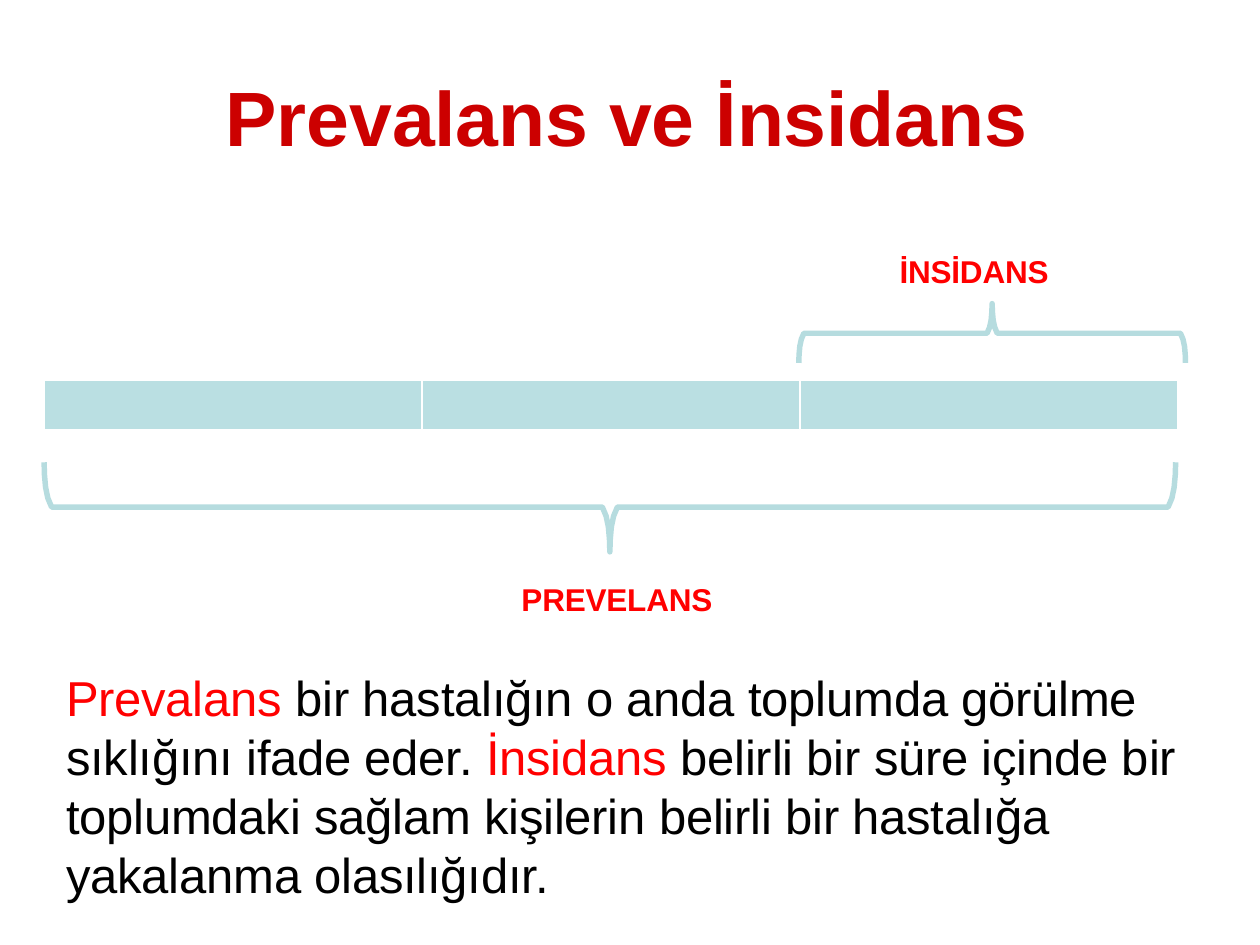
"""Build the slide that contrasts prevalence and incidence on a timeline."""
import pptx
import pptx.dml.color
import pptx.enum.text
import pptx.oxml
import pptx.oxml.ns
import pptx.util

Pt = pptx.util.Pt
RGB = pptx.dml.color.RGBColor
DARK_RED = RGB(0xCC, 0x00, 0x00)
RED = RGB(0xFF, 0x00, 0x00)
BLACK = RGB(0x00, 0x00, 0x00)
BAR = RGB(0xBA, 0xDF, 0xE2)
BRACE = RGB(0xB6, 0xDC, 0xDF)

TITLE = {"size": Pt(44), "bold": True, "name": "Arial"}
LABEL = {"size": Pt(18), "bold": True, "name": "Arial"}
BODY = {"size": Pt(28), "bold": False, "name": "Arial"}
CORNER = [(0, 0), (0.05, 0.14), (0.2, 0.28), (0.5, 0.4), (1, 0.5)]
BORDERS = {"lnL": 1, "lnR": 1, "lnT": 1, "lnB": 3}


def add_text(slide, box, runs, fmt):
    """Add a text box whose runs are (text, colour) pairs in one format."""
    tf = slide.shapes.add_textbox(*map(Pt, box)).text_frame
    tf.word_wrap = True
    tf.auto_size = pptx.enum.text.MSO_AUTO_SIZE.NONE
    for side, inset in {"left": 0, "top": 2, "right": 0, "bottom": 0}.items():
        setattr(tf, f"margin_{side}", Pt(inset))
    p = tf.paragraphs[0]
    for text, color in runs:
        r = p.add_run()
        r.text = text
        for key, value in fmt.items():
            setattr(r.font, key, value)
        r.font.color.rgb = color
        r.font._element.set("spc", "-10")


def add_brace(slide, left, width, open_y, tip_y, radius):
    """Draw a curly brace from its open ends to its tip."""
    half = width / 2
    start = [(u * radius, v) for u, v in CORNER]
    tip = [(half - u * radius, 1 - v) for u, v in reversed(CORNER)]
    side = start + tip
    outline = side + [(width - x, v) for x, v in reversed(side[:-1])]
    points = [(Pt(left + x), Pt(open_y + v * (tip_y - open_y))) for x, v in outline]
    fb = slide.shapes.build_freeform(*points[0])
    fb.add_line_segments(points[1:], close=False)
    sp = fb.convert_to_shape()
    sp.shadow.inherit = False
    sp.fill.background()
    sp.line.color.rgb = BRACE
    sp.line.width = Pt(3.12)


def add_border(cell, tag, width):
    """Add a white border to one side of a table cell."""
    cell._tc.get_or_add_tcPr().append(pptx.oxml.parse_xml(
        f'<a:{tag} {pptx.oxml.ns.nsdecls("a")} w="{Pt(width)}"><a:solidFill>'
        f'<a:srgbClr val="FFFFFF"/></a:solidFill></a:{tag}>'))


def add_bar(slide, box, cols):
    """Add the timeline as a one-row table of equal cells."""
    table = slide.shapes.add_table(1, cols, *map(Pt, box)).table
    table.first_row = table.horz_banding = False
    for cell in table.rows[0].cells:
        for side in ("left", "top", "right", "bottom"):
            setattr(cell, f"margin_{side}", Pt(0))
        cell.text_frame.paragraphs[0].font.size = Pt(18)
        for tag, width in BORDERS.items():
            add_border(cell, tag, width)
        cell.fill.solid()
        cell.fill.fore_color.rgb = BAR


def main():
    """Build and save the slide."""
    prs = pptx.Presentation()
    prs.slide_width, prs.slide_height = Pt(720), Pt(540)
    slide = prs.slides.add_slide(prs.slide_layouts[6])
    add_text(slide, (129, 38, 465, 55), [("Prevalans ve İnsidans", DARK_RED)], TITLE)
    add_bar(slide, (25.2, 217.4, 648, 28.8), 3)
    add_brace(slide, 456.5, 221, 207.4, 173.5, 2.9)
    add_text(slide, (514, 142, 90, 24), [("İNSİDANS", RED)], LABEL)
    add_brace(slide, 25.2, 646.6, 264.2, 315.4, 4.3)
    add_text(slide, (298, 329.5, 114, 24), [("PREVELANS", RED)], LABEL)
    add_text(slide, (37.8, 379.5, 644.4, 137), [
        ("Prevalans ", RED),
        ("bir hastalığın o anda toplumda görülme sıklığını ifade eder. ", BLACK),
        ("İnsidans ", RED),
        ("belirli bir süre içinde bir toplumdaki sağlam kişilerin belirli bir "
         "hastalığa yakalanma olasılığıdır.", BLACK),
    ], BODY)
    prs.save("out.pptx")


if __name__ == "__main__":
    main()
